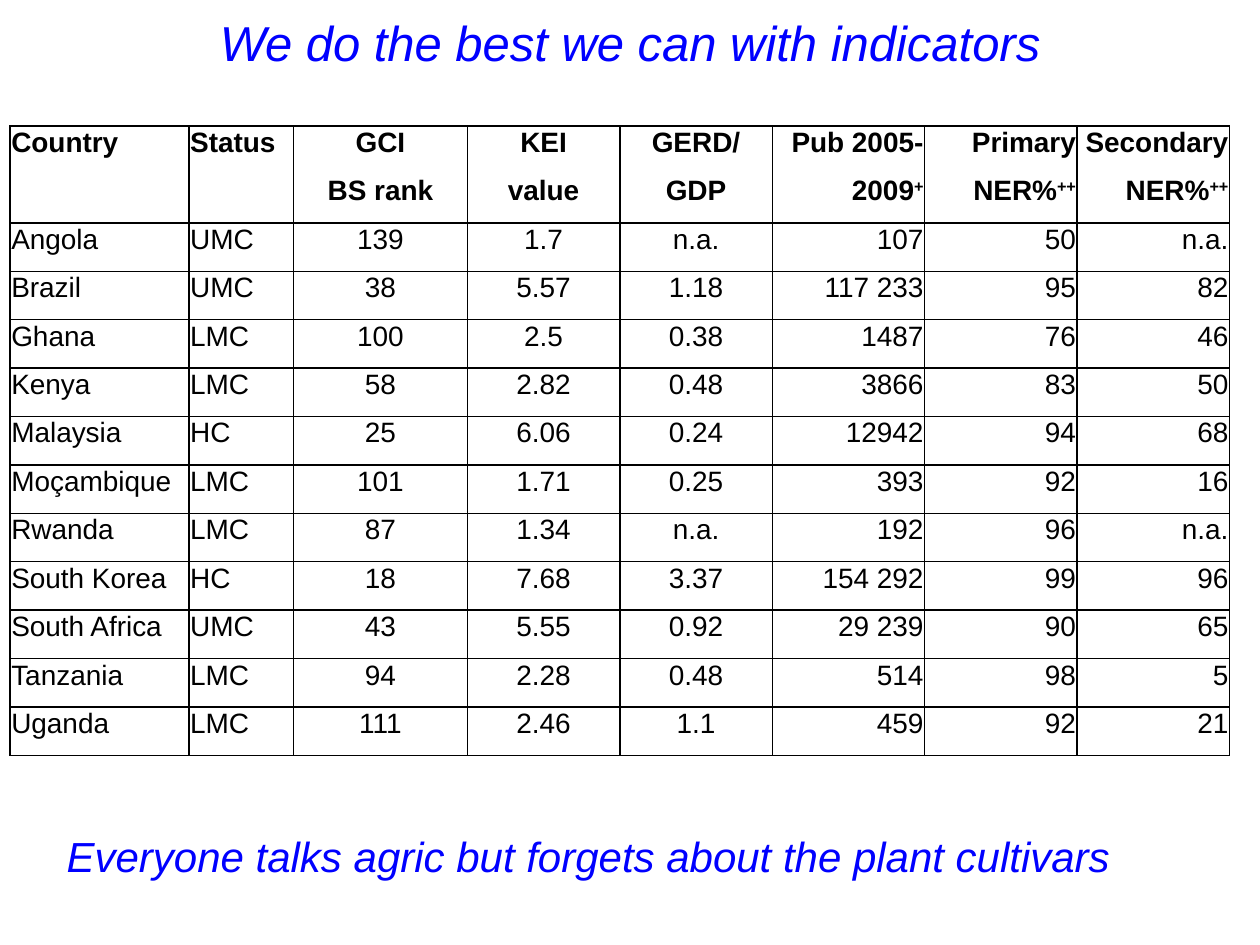
from lxml import etree
from pptx import Presentation
from pptx.dml.color import RGBColor
from pptx.enum import text
from pptx.oxml import ns
from pptx.util import Inches, Pt

COLORS = {"ink": "000000", "accent": "0000FF"}
HEADLINE = "We do the best we can with indicators"
REMARK = "Everyone talks agric but forgets about the plant cultivars"
COLUMN_WIDTHS = [1.42, 0.83, 1.38] + [1.21] * 5
ROW_HEIGHT = 5 / 13
ALIGNMENTS = (
    [text.PP_ALIGN.JUSTIFY] * 2 + [text.PP_ALIGN.CENTER] * 3 + [text.PP_ALIGN.RIGHT] * 3
)
HEADER = [
    ["Country", "Status", "GCI", "KEI", "GERD/", "Pub 2005-", "Primary", "Secondary"],
    ["", "", "BS rank", "value", "GDP", "2009^+", "NER%^++", "NER%^++"],
]
COUNTRIES = [
    ["Angola", "UMC", "139", "1.7", "n.a.", "107", "50", "n.a."],
    ["Brazil", "UMC", "38", "5.57", "1.18", "117 233", "95", "82"],
    ["Ghana", "LMC", "100", "2.5", "0.38", "1487", "76", "46"],
    ["Kenya", "LMC", "58", "2.82", "0.48", "3866", "83", "50"],
    ["Malaysia", "HC", "25", "6.06", "0.24", "12942", "94", "68"],
    ["Moçambique", "LMC", "101", "1.71", "0.25", "393", "92", "16"],
    ["Rwanda", "LMC", "87", "1.34", "n.a.", "192", "96", "n.a."],
    ["South Korea", "HC", "18", "7.68", "3.37", "154 292", "99", "96"],
    ["South Africa", "UMC", "43", "5.55", "0.92", "29 239", "90", "65"],
    ["Tanzania", "LMC", "94", "2.28", "0.48", "514", "98", "5"],
    ["Uganda", "LMC", "111", "2.46", "1.1", "459", "92", "21"],
]


def apply_format(target, values):
    """Set each named attribute on the target."""
    for name, value in values.items():
        setattr(target, name, value)


def format_font(font, color, **values):
    """Give a font the slide's typeface, a colour and further values."""
    apply_format(font, {"name": "Arial", **values})
    font.color.rgb = RGBColor.from_string(COLORS[color])


def write_statement(shape, box, wording, size):
    """Place a centred italic statement in the given box."""
    apply_format(shape, dict(zip(("left", "top", "width", "height"), map(Inches, box))))
    frame = shape.text_frame
    apply_format(frame, {
        "text": wording,
        "word_wrap": True,
        "auto_size": text.MSO_AUTO_SIZE.NONE,
        "vertical_anchor": text.MSO_ANCHOR.MIDDLE,
    })
    line = frame.paragraphs[0]
    line.alignment = text.PP_ALIGN.CENTER
    format_font(line.runs[0].font, "accent", size=Pt(size), italic=True, bold=False)


def draw_borders(cell, sides):
    """Draw one-point borders on the named sides and clear the others."""
    properties = cell._tc.get_or_add_tcPr()
    for place, side in enumerate("LRTB"):
        border = etree.Element(ns.qn(f"a:ln{side}"), w=str(Pt(1)))
        if side in sides:
            fill = etree.SubElement(border, ns.qn("a:solidFill"))
            etree.SubElement(fill, ns.qn("a:srgbClr"), val=COLORS["ink"])
        else:
            etree.SubElement(border, ns.qn("a:noFill"))
        properties.insert(place, border)


def write_cell(cell, wording, alignment, bold):
    """Write a cell, raising whatever follows a caret."""
    cell.fill.background()
    apply_format(cell, {
        "margin_left": Inches(0.01),
        "margin_right": Inches(0.01),
        "margin_top": Inches(0.01),
        "margin_bottom": 0,
        "vertical_anchor": text.MSO_ANCHOR.TOP,
    })
    line = cell.text_frame.paragraphs[0]
    line.alignment = alignment
    format_font(line.font, "ink", size=Pt(16), bold=bold)
    base, _, raised = wording.partition("^")
    for part in filter(None, (base, raised)):
        run = line.add_run()
        run.text = part
        format_font(run.font, "ink", size=Pt(16), bold=bold)
    if raised:
        run._r.get_or_add_rPr().set("baseline", "30000")


def add_indicators(slide, left, top):
    """Build the country indicator table from its top left corner."""
    rows = HEADER + COUNTRIES
    size = (sum(COLUMN_WIDTHS), ROW_HEIGHT * len(rows))
    table = slide.shapes.add_table(
        len(rows), len(COLUMN_WIDTHS), *map(Inches, (left, top, *size))
    ).table
    apply_format(table, {"first_row": False, "horz_banding": False})
    for column, width in zip(table.columns, COLUMN_WIDTHS):
        column.width = Inches(width)
    header_sides = {0: "LRT", 1: "LRB"}
    for r, row in enumerate(rows):
        table.rows[r].height = Inches(ROW_HEIGHT)
        for c, wording in enumerate(row):
            cell = table.cell(r, c)
            write_cell(cell, wording, ALIGNMENTS[c], r < len(HEADER))
            draw_borders(cell, "LRTB" if c < 2 else header_sides.get(r, "LRTB"))
    for c in range(2):
        table.cell(0, c).merge(table.cell(1, c))


def main():
    """Build and save the slide."""
    deck = Presentation()
    apply_format(deck, {"slide_width": Inches(10), "slide_height": Inches(7.5)})
    slide = deck.slides.add_slide(deck.slide_layouts[0])
    subtitle = slide.placeholders[1].element
    subtitle.getparent().remove(subtitle)
    add_indicators(slide, 0.08, 1)
    write_statement(slide.shapes.title, (0, -0.17, 10, 1), HEADLINE, 28)
    remark = slide.shapes.add_textbox(0, 0, 0, 0)
    write_statement(remark, (0.42, 6.33, 8.5, 0.92), REMARK, 24)
    deck.save("out.pptx")


if __name__ == "__main__":
    main()
